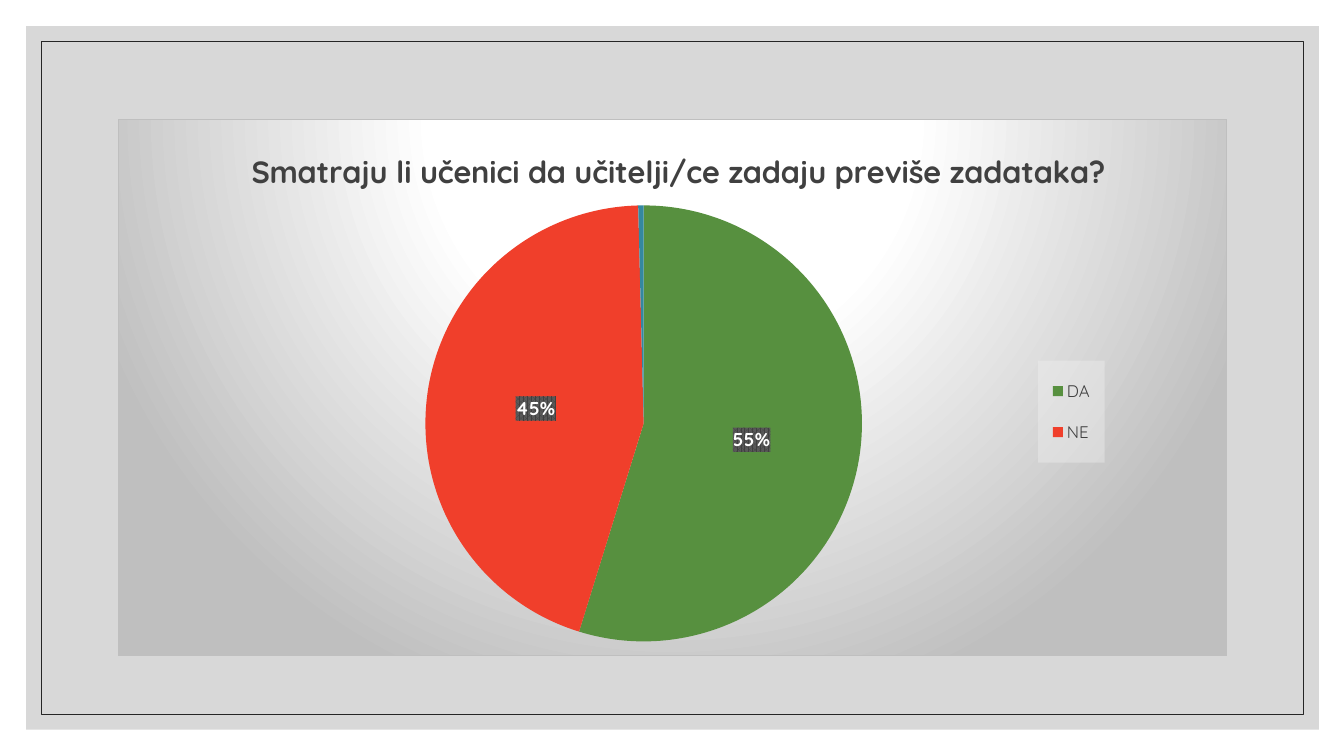
from dataclasses import dataclass

from lxml import etree
from pptx import Presentation
from pptx.chart import data as chart_data
from pptx.dml import color
from pptx.enum import chart as chart_enum, shapes
from pptx.oxml import ns
from pptx.util import Inches, Pt


@dataclass(frozen=True)
class Theme:
    """Colours, font and type sizes of the slide."""
    font: str = "Quicksand"
    panel: str = "BFBFBF"
    frame: str = "262626"
    ink: str = "404040"
    label_weave: str = "595959"
    legend_panel: str = "F2F2F2"
    white: str = "FFFFFF"
    slices: tuple = ("57903F", "F03F2B", "3488A0")
    base_size: float = 10
    title_size: float = 22
    legend_size: float = 12
    label_size: float = 13.3


THEME = Theme()
QUESTION = "Smatraju li učenici da učitelji/ce zadaju previše zadataka?"
ANSWERS = {"DA": 55, "NE": 45, "": 0.4}
UNNAMED = 2


def xml(markup):
    """Parse a chart fragment with the c and a prefixes declared."""
    tag, rest = markup.split(">", 1)
    slash = "/" if tag.endswith("/") else ""
    return etree.fromstring(f"{tag.rstrip('/')} {ns.nsdecls('c', 'a')}{slash}>{rest}")


def solid(rgb, alpha=100):
    """Return solid fill markup with an opacity in percent."""
    return (f'<a:solidFill><a:srgbClr val="{rgb}"><a:alpha val="{alpha * 1000}"/>'
            "</a:srgbClr></a:solidFill>")


def layout(x, y, width=None, height=None, inner=False):
    """Return a manual layout in fractions of the chart."""
    target = '<c:layoutTarget val="inner"/>' if inner else ""
    sizes = f'<c:w val="{width}"/><c:h val="{height}"/>' if width else ""
    return xml(f'<c:layout><c:manualLayout>{target}<c:xMode val="edge"/>'
               f'<c:yMode val="edge"/><c:x val="{x}"/><c:y val="{y}"/>{sizes}'
               "</c:manualLayout></c:layout>")


def drop_layout(part):
    """Remove the automatic layout of a chart part."""
    for old in part.findall(ns.qn("c:layout")):
        part.remove(old)


def style_font(font, size, rgb, bold=False):
    """Set the typeface, size, colour and weight of a font."""
    font.name, font.size, font.bold = THEME.font, Pt(size), bold
    font.color.rgb = color.RGBColor.from_string(rgb)


def write(frame, content, **style):
    """Put text into a text frame with the given font style."""
    run = frame.paragraphs[0].add_run()
    run.text = content
    style_font(run.font, **style)


def add_backdrop(slide, box, inset):
    """Draw the grey panel and the thin frame inset in the box."""
    left, top, width, height = box
    panel = slide.shapes.add_shape(shapes.MSO_SHAPE.RECTANGLE, *map(Inches, box))
    panel.shadow.inherit = False
    panel.fill.solid()
    panel.fill.fore_color.rgb = color.RGBColor.from_string(THEME.panel)
    panel.fill._xPr.find(ns.qn("a:solidFill"))[0].append(xml('<a:alpha val="60000"/>'))
    panel.line.fill.background()
    frame = slide.shapes.add_shape(
        shapes.MSO_SHAPE.RECTANGLE, Inches(left + inset), Inches(top + inset),
        Inches(width - 2 * inset), Inches(height - 2 * inset))
    frame.shadow.inherit = False
    frame.fill.background()
    frame.line.color.rgb = color.RGBColor.from_string(THEME.frame)
    frame.line.width = Pt(0.5)


def style_area(chart):
    """Give the chart area its radial gradient and border."""
    stops = "".join(f'<a:gs pos="{at * 1000}"><a:srgbClr val="{rgb}"/></a:gs>'
                    for at, rgb in ((0, THEME.white), (39, THEME.white), (100, THEME.panel)))
    chart._chartSpace.find(ns.qn("c:chart")).addnext(xml(
        f'<c:spPr><a:gradFill><a:gsLst>{stops}</a:gsLst><a:path path="circle">'
        '<a:fillToRect l="50000" t="-80000" r="50000" b="180000"/></a:path></a:gradFill>'
        f'<a:ln w="9525">{solid(THEME.panel)}</a:ln></c:spPr>'))


def style_title(chart):
    """Write and place the chart title."""
    chart.has_title = True
    title = chart.chart_title
    write(title.text_frame, QUESTION, size=THEME.title_size, rgb=THEME.ink, bold=True)
    title.include_in_layout = False
    drop_layout(title._element)
    title._element.find(ns.qn("c:tx")).addnext(layout(0.115, 0.045))


def style_legend(chart):
    """Place the legend and hide the unnamed answer."""
    chart.has_legend = True
    legend = chart.legend
    legend.position = chart_enum.XL_LEGEND_POSITION.RIGHT
    legend.include_in_layout = False
    style_font(legend.font, THEME.legend_size, THEME.ink)
    drop_layout(legend._element)
    position = legend._element.find(ns.qn("c:legendPos"))
    position.addnext(layout(0.83, 0.45, 0.06, 0.19))
    position.addnext(xml(f'<c:legendEntry><c:idx val="{UNNAMED}"/>'
                         '<c:delete val="1"/></c:legendEntry>'))
    legend._element.find(ns.qn("c:txPr")).addprevious(
        xml(f"<c:spPr>{solid(THEME.legend_panel, 39)}</c:spPr>"))


def style_slices(chart):
    """Colour and place the slices and label their shares."""
    plot = chart.plots[0]
    plot.vary_by_categories = True
    area = chart._chartSpace.find(".//" + ns.qn("c:plotArea"))
    drop_layout(area)
    area.insert(0, layout(0.277, 0.16, 0.394, 0.814, inner=True))
    series = plot.series[0]
    for index, rgb in enumerate(THEME.slices):
        fill = series.points[index].format.fill
        fill.solid()
        fill.fore_color.rgb = color.RGBColor.from_string(rgb)
    labels = series.data_labels
    labels.show_value, labels.show_percentage = False, True
    labels.number_format, labels.number_format_is_linked = "0%", False
    labels.position = chart_enum.XL_LABEL_POSITION.CENTER
    style_font(labels.font, THEME.label_size, THEME.white, bold=True)
    labels._element.find(ns.qn("c:txPr")).addprevious(xml(
        f'<c:spPr><a:pattFill prst="pct75"><a:fgClr><a:srgbClr val="{THEME.ink}"/></a:fgClr>'
        f'<a:bgClr><a:srgbClr val="{THEME.label_weave}"/></a:bgClr></a:pattFill></c:spPr>'))
    labels._element.insert(0, xml(f'<c:dLbl><c:idx val="{UNNAMED}"/>'
                                  '<c:delete val="1"/></c:dLbl>'))


def add_answer_chart(slide, box):
    """Add the pie chart of answers in the box."""
    answers = chart_data.CategoryChartData()
    answers.categories = list(ANSWERS)
    answers.add_series(QUESTION, list(ANSWERS.values()))
    chart = slide.shapes.add_chart(
        chart_enum.XL_CHART_TYPE.PIE, *map(Inches, box), answers).chart
    style_font(chart.font, THEME.base_size, "000000")
    style_area(chart)
    style_title(chart)
    style_legend(chart)
    style_slices(chart)


def main():
    """Build and save the slide."""
    deck = Presentation()
    deck.slide_width, deck.slide_height = Inches(13.33), Inches(7.5)
    slide = deck.slides.add_slide(deck.slide_layouts[6])
    add_backdrop(slide, (0.26, 0.26, 12.82, 6.98), 0.15)
    add_answer_chart(slide, (1.17, 1.18, 11, 5.33))
    deck.save("out.pptx")


if __name__ == "__main__":
    main()
